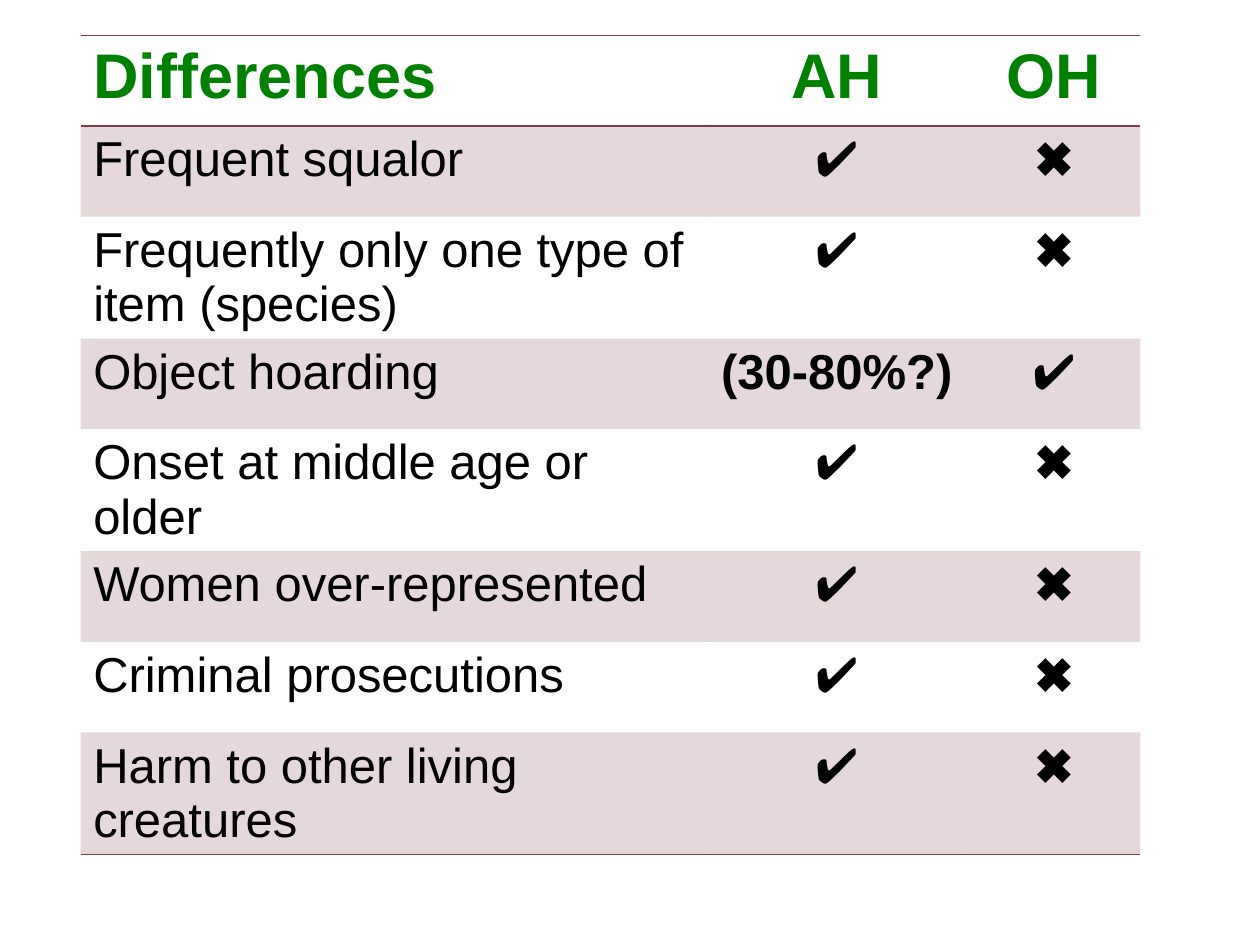
from dataclasses import dataclass

from lxml.etree import SubElement
from pptx import Presentation
from pptx.dml.color import RGBColor
from pptx.enum.text import PP_ALIGN
from pptx.oxml.ns import qn
from pptx.util import Inches, Pt


@dataclass(frozen=True)
class Theme:
    """Colours, font and type sizes of the slide."""
    font: str = "Arial"
    heading: str = "008000"
    body: str = "000000"
    accent: str = "7D3C4A"
    band_opacity: int = 20
    heading_size: int = 36
    body_size: int = 28
    rule_width: int = 1


THEME = Theme()
NO_STYLE = "{2D5ABB26-0587-4C30-8999-92F81FD0307C}"
YES, NO = "✔", "✖"
COMPARISON = [
    ("Differences", "AH", "OH"),
    ("Frequent squalor", YES, NO),
    ("Frequently only one type of item (species)", YES, NO),
    ("Object hoarding", "(30-80%?)", YES),
    ("Onset at middle age or older", YES, NO),
    ("Women over-represented", YES, NO),
    ("Criminal prosecutions", YES, NO),
    ("Harm to other living creatures", YES, NO),
]
COLUMN_SHARES = (0.59, 0.247, 0.163)


def rule_cell(cell, side):
    """Draw an accent rule along the given side of a cell."""
    rule = SubElement(cell._tc.get_or_add_tcPr(), qn(f"a:ln{side}"),
                      w=str(Pt(THEME.rule_width)))
    SubElement(SubElement(rule, qn("a:solidFill")), qn("a:srgbClr"), val=THEME.accent)


def fill_cell(cell, banded):
    """Give a cell the translucent accent band, or no fill."""
    if not banded:
        cell.fill.background()
        return
    cell.fill.solid()
    cell.fill.fore_color.rgb = RGBColor.from_string(THEME.accent)
    tint = cell._tc.tcPr.find(f"{qn('a:solidFill')}/{qn('a:srgbClr')}")
    SubElement(tint, qn("a:alpha"), val=str(THEME.band_opacity * 1000))


def write_cell(cell, wording, heading, centred):
    """Write the wording of a cell in heading or body type."""
    cell.text_frame.text = wording
    paragraph = cell.text_frame.paragraphs[0]
    paragraph.alignment = PP_ALIGN.CENTER if centred else PP_ALIGN.LEFT
    font = paragraph.runs[0].font
    font.name = THEME.font
    font.size = Pt(THEME.heading_size if heading else THEME.body_size)
    font.bold = heading or wording.startswith("(")
    font.color.rgb = RGBColor.from_string(THEME.heading if heading else THEME.body)


def add_comparison(slide, left, top, width, height):
    """Place the table of differences in the given box."""
    table = slide.shapes.add_table(
        len(COMPARISON), len(COLUMN_SHARES), left, top, width, height).table
    table._tbl.tblPr.find(qn("a:tableStyleId")).text = NO_STYLE
    for column, share in zip(table.columns, COLUMN_SHARES):
        column.width = int(width * share)
    last = len(COMPARISON) - 1
    for row, wordings in enumerate(COMPARISON):
        for col, wording in enumerate(wordings):
            cell = table.cell(row, col)
            write_cell(cell, wording, heading=row == 0, centred=col > 0)
            if row == 0:
                rule_cell(cell, "T")
            if row in (0, last):
                rule_cell(cell, "B")
            fill_cell(cell, banded=row % 2 == 1)


def main():
    """Build and save the slide."""
    deck = Presentation()
    deck.slide_width, deck.slide_height = Inches(10), Inches(7.5)
    slide = deck.slides.add_slide(deck.slide_layouts[6])
    add_comparison(slide, Inches(0.64), Inches(0.28), Inches(8.41),
                   Inches(0.72) * len(COMPARISON))
    deck.save("out.pptx")


if __name__ == "__main__":
    main()
